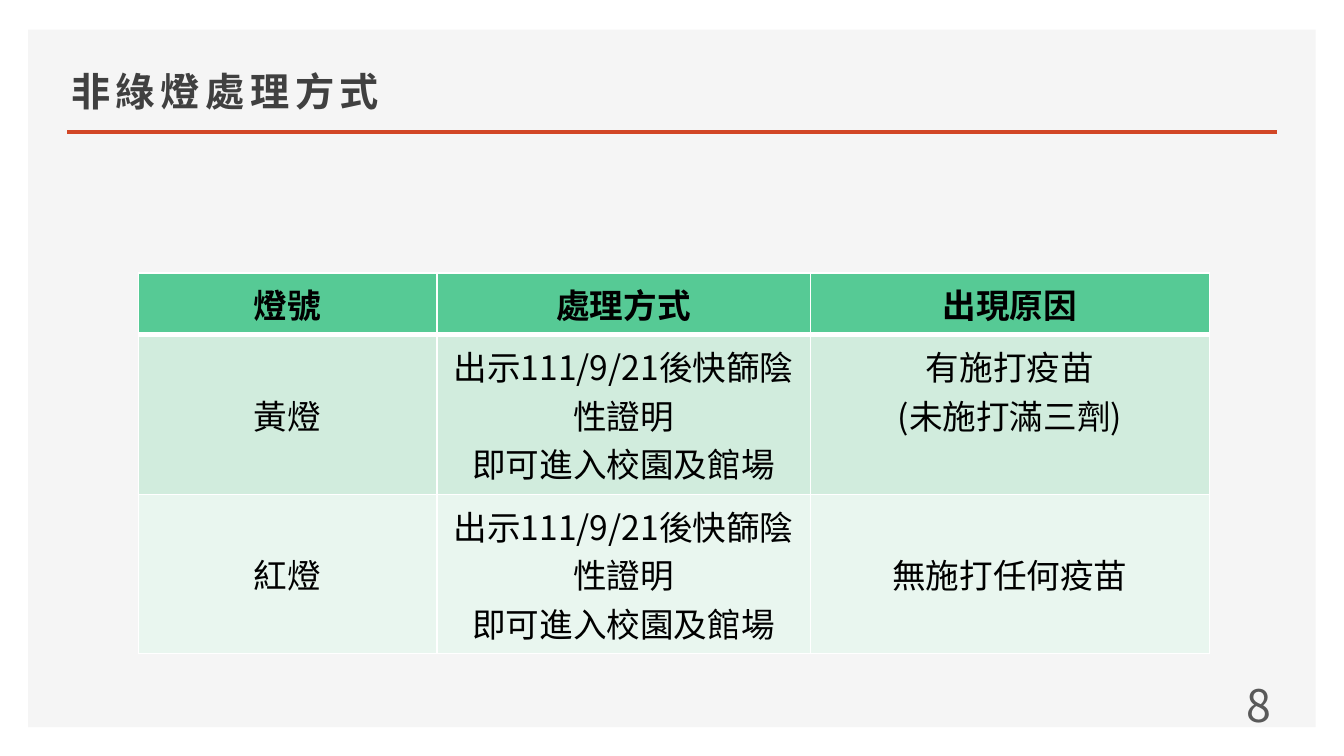
from lxml import etree
from pptx import Presentation
from pptx.dml.color import RGBColor
from pptx.enum import shapes, text
from pptx.oxml.ns import qn
from pptx.util import Inches, Pt

TITLE = "非綠燈處理方式"
PAGE_NUMBER = "8"
TEST_STEPS = ["出示111/9/21後快篩陰性證明", "即可進入校園及館場"]
ROWS = [
    [["燈號"], ["處理方式"], ["出現原因"]],
    [["黃燈"], TEST_STEPS, ["有施打疫苗", "(未施打滿三劑)"]],
    [["紅燈"], TEST_STEPS, ["無施打任何疫苗"]],
]
COLUMN_WIDTHS = [2.22, 2.78, 2.97]
ROW_HEIGHT = 0.41

THEME = {
    "panel": "F5F5F5",
    "rule": "D24726",
    "border": "FFFFFF",
    "row_fills": ["56CA95", "D1ECDD", "E9F6EF"],
    "title": {"name": "Noto Sans CJK SC", "size": 21, "color": "404040", "bold": True},
    "header": {"name": "Noto Sans CJK SC", "size": 18, "color": "000000", "bold": True},
    "body": {"name": "Noto Sans CJK SC", "size": 18, "color": "000000", "bold": False},
    "number": {"name": "Noto Sans CJK TC", "size": 24, "color": "595959", "bold": False},
}


def color(value):
    return RGBColor.from_string(value)


def box(left, top, width, height):
    return [Inches(value) for value in (left, top, width, height)]


def write(frame, lines, style, alignment, spacing=None):
    for index, line in enumerate(lines):
        paragraph = frame.paragraphs[0] if index == 0 else frame.add_paragraph()
        paragraph.alignment = alignment
        run = paragraph.add_run()
        run.text = line
        values = {"name": style["name"], "size": Pt(style["size"]), "bold": style["bold"]}
        for name, value in values.items():
            setattr(run.font, name, value)
        run.font.color.rgb = color(style["color"])
        properties = run._r.get_or_add_rPr()
        east_asian = etree.SubElement(properties, qn("a:ea"))
        east_asian.set("typeface", style["name"])
        if spacing:
            properties.set("spc", str(spacing * 100))


def set_borders(cell, widths):
    """Draw cell borders; widths are points keyed by side, in schema order."""
    properties = cell._tc.get_or_add_tcPr()
    for index, (side, width) in enumerate(widths.items()):
        line = etree.Element(qn(f"a:ln{side}"), w=str(Pt(width)))
        fill = etree.SubElement(line, qn("a:solidFill"))
        etree.SubElement(fill, qn("a:srgbClr"), val=THEME["border"])
        properties.insert(index, line)


def add_background(slide):
    panel = slide.shapes.add_shape(
        shapes.MSO_SHAPE.RECTANGLE, *box(0.21, 0.22, 9.58, 5.19))
    panel.shadow.inherit = False
    panel.fill.solid()
    panel.fill.fore_color.rgb = color(THEME["panel"])
    panel.line.fill.background()
    rule = slide.shapes.add_connector(
        shapes.MSO_CONNECTOR.STRAIGHT, *box(0.5, 0.98, 9.5, 0.98))
    rule.line.color.rgb = color(THEME["rule"])
    rule.line.width = Pt(2)
    etree.SubElement(rule._element.spPr, qn("a:effectLst"))


def add_title(slide):
    title = slide.shapes.title
    title.left, title.top, title.width, title.height = box(0.43, 0.37, 5.64, 0.53)
    frame = title.text_frame
    frame.auto_size = text.MSO_AUTO_SIZE.NONE
    frame.vertical_anchor = text.MSO_ANCHOR.BOTTOM
    write(frame, [TITLE], THEME["title"], text.PP_ALIGN.LEFT, spacing=3)
    # The title stacks above the background panel.
    slide.shapes._spTree.append(title._element)


def add_light_table(slide):
    table = slide.shapes.add_table(
        len(ROWS), len(COLUMN_WIDTHS),
        *box(1.03, 2.03, sum(COLUMN_WIDTHS), ROW_HEIGHT * len(ROWS))).table
    for column, width in zip(table.columns, COLUMN_WIDTHS):
        column.width = Inches(width)
    for row_index, row in enumerate(ROWS):
        table.rows[row_index].height = Inches(ROW_HEIGHT)
        is_header = row_index == 0
        for column_index, lines in enumerate(row):
            cell = table.cell(row_index, column_index)
            cell.fill.solid()
            cell.fill.fore_color.rgb = color(THEME["row_fills"][row_index])
            centred = not is_header and len(lines) == 1
            cell.vertical_anchor = (
                text.MSO_ANCHOR.MIDDLE if centred else text.MSO_ANCHOR.TOP)
            write(cell.text_frame, lines, THEME["header" if is_header else "body"],
                  text.PP_ALIGN.CENTER)
            set_borders(cell, {"L": 1, "R": 1, "T": 3 if row_index == 1 else 1,
                               "B": 3 if is_header else 1})


def add_page_number(slide):
    frame = slide.shapes.add_textbox(*box(6.87, 5.09, 2.69, 0.3)).text_frame
    frame.word_wrap = True
    frame.vertical_anchor = text.MSO_ANCHOR.MIDDLE
    write(frame, [PAGE_NUMBER], THEME["number"], text.PP_ALIGN.RIGHT)


def main():
    presentation = Presentation()
    presentation.slide_width = Inches(10)
    presentation.slide_height = presentation.slide_width * 9 // 16
    slide = presentation.slides.add_slide(presentation.slide_layouts[5])
    add_background(slide)
    add_title(slide)
    add_light_table(slide)
    add_page_number(slide)
    presentation.save("out.pptx")


if __name__ == "__main__":
    main()
